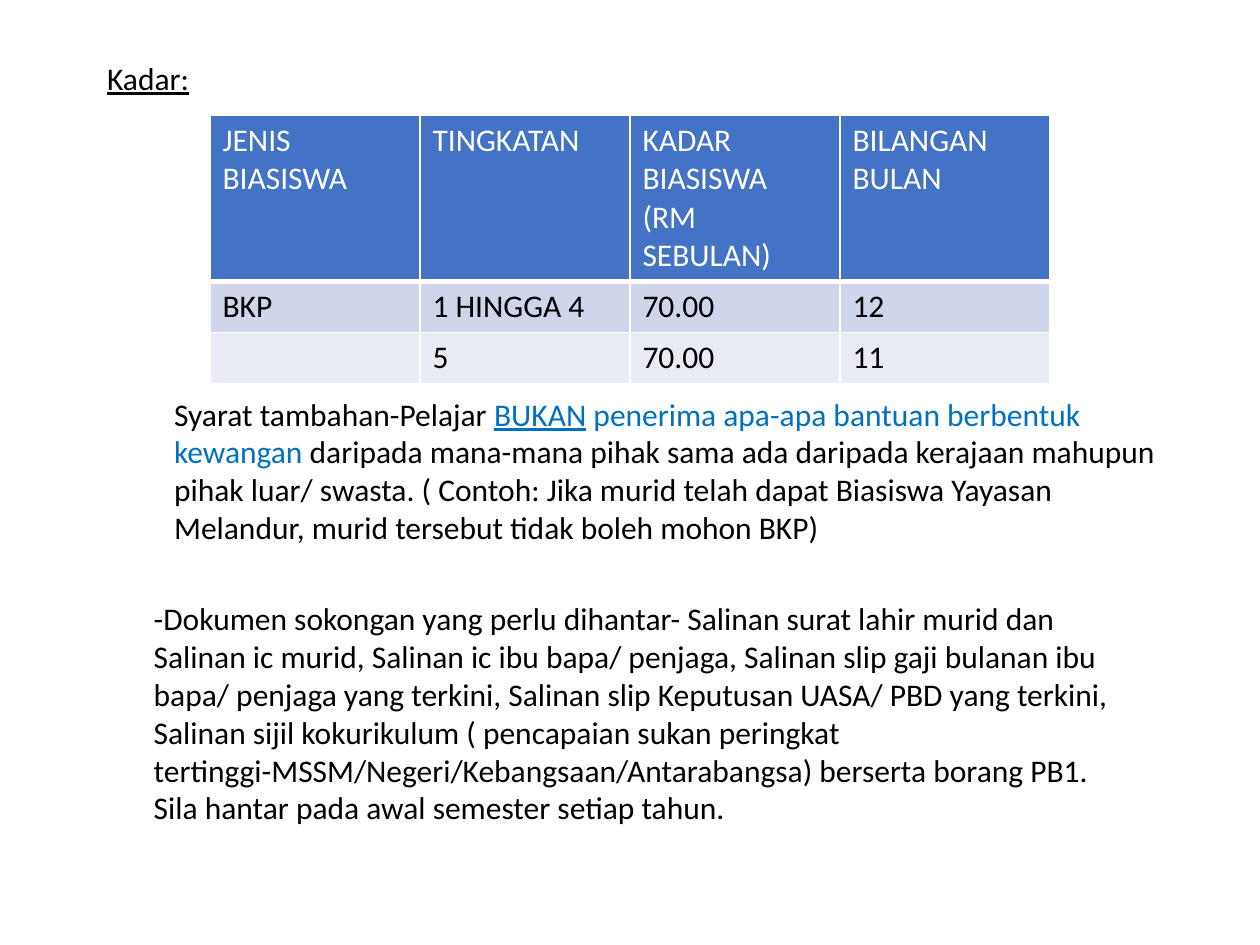
from dataclasses import dataclass

from lxml import etree
from pptx import Presentation
from pptx.dml.color import RGBColor
from pptx.enum import text as t
from pptx.oxml import ns
from pptx.util import Pt


@dataclass(frozen=True)
class Theme:
    font: str = "Calibri"
    size: float = 18
    ink: str = "000000"
    pale: str = "FFFFFF"
    note: str = "0070C0"
    head: str = "4472C4"
    bands: tuple = ("CFD5EA", "E9EBF5")
    thin: float = 1
    thick: float = 3


THEME = Theme()

RATES = [
    ["JENIS BIASISWA", "TINGKATAN", "KADAR BIASISWA (RM SEBULAN)", "BILANGAN BULAN"],
    ["BKP", "1 HINGGA 4", "70.00", "12"],
    ["", "5", "70.00", "11"],
]
TERMS = [
    ("Syarat tambahan-Pelajar ", {}),
    ("BUKAN", {"color": THEME.note, "under": True}),
    (" penerima apa-apa bantuan berbentuk kewangan ", {"color": THEME.note}),
    ("daripada mana-mana pihak sama ada daripada kerajaan mahupun pihak luar/ swasta. "
     "( Contoh: Jika murid telah dapat Biasiswa Yayasan Melandur, "
     "murid tersebut tidak boleh mohon BKP)", {}),
]
PAPERS = [
    ("-Dokumen sokongan yang perlu dihantar- Salinan surat lahir murid dan "
     "Salinan ic murid, Salinan ic ibu bapa/ penjaga, Salinan slip gaji bulanan "
     "ibu bapa/ penjaga yang terkini, Salinan slip Keputusan UASA/ PBD yang terkini, "
     "Salinan sijil kokurikulum ( pencapaian sukan peringkat "
     "tertinggi-MSSM/Negeri/Kebangsaan/Antarabangsa) berserta borang PB1. "
     "Sila hantar pada awal semester setiap tahun.", {}),
]


def write(para, words, color=THEME.ink, under=False):
    run = para.add_run()
    run.text = words
    font = run.font
    font.name, font.size = THEME.font, Pt(THEME.size)
    font.bold, font.underline = False, under
    font.color.rgb = RGBColor.from_string(color)


def setup(frame):
    """Make a text frame wrap from the top and keep its size."""
    frame.word_wrap = True
    frame.auto_size = t.MSO_AUTO_SIZE.NONE
    frame.vertical_anchor = t.MSO_ANCHOR.TOP
    para = frame.paragraphs[0]
    para.alignment = t.PP_ALIGN.LEFT
    return para


def title(slide, box, words):
    shape = slide.shapes.title
    shape.left, shape.top, shape.width, shape.height = map(Pt, box)
    write(setup(shape.text_frame), words, under=True)


def body(slide, box, runs):
    shape = slide.shapes.add_textbox(*map(Pt, box))
    para = setup(shape.text_frame)
    for words, style in runs:
        write(para, words, **style)


def edge(cell, base):
    """Draw white cell borders, with the bottom one of width base."""
    props = cell._tc.get_or_add_tcPr()
    widths = {"lnL": THEME.thin, "lnR": THEME.thin, "lnT": THEME.thin, "lnB": base}
    for name, width in widths.items():
        line = etree.SubElement(props, ns.qn(f"a:{name}"), w=str(Pt(width)))
        fill = etree.SubElement(line, ns.qn("a:solidFill"))
        etree.SubElement(fill, ns.qn("a:srgbClr"), val=THEME.pale)


def table(slide, box, rows, step):
    frame = slide.shapes.add_table(len(rows), len(rows[0]), *map(Pt, box))
    grid = frame.table
    for i, row in enumerate(rows):
        grid.rows[i].height = Pt(step)
        head = i == 0
        back = THEME.head if head else THEME.bands[(i - 1) % 2]
        for j, words in enumerate(row):
            cell = grid.cell(i, j)
            edge(cell, THEME.thick if head else THEME.thin)
            cell.fill.solid()
            cell.fill.fore_color.rgb = RGBColor.from_string(back)
            write(cell.text_frame.paragraphs[0], words,
                  color=THEME.pale if head else THEME.ink)
    frame.height = Pt(box[3])


def main():
    deck = Presentation()
    deck.slide_width, deck.slide_height = Pt(720), Pt(540)
    slide = deck.slides.add_slide(deck.slide_layouts[5])
    title(slide, (54, 30, 216, 29), "Kadar:")
    table(slide, (120, 65.8, 480, 98), RATES, 29.2)
    body(slide, (92.4, 222, 588, 138), TERMS)
    body(slide, (80.8, 339, 561.6, 138), PAPERS)
    deck.save("out.pptx")


if __name__ == "__main__":
    main()
